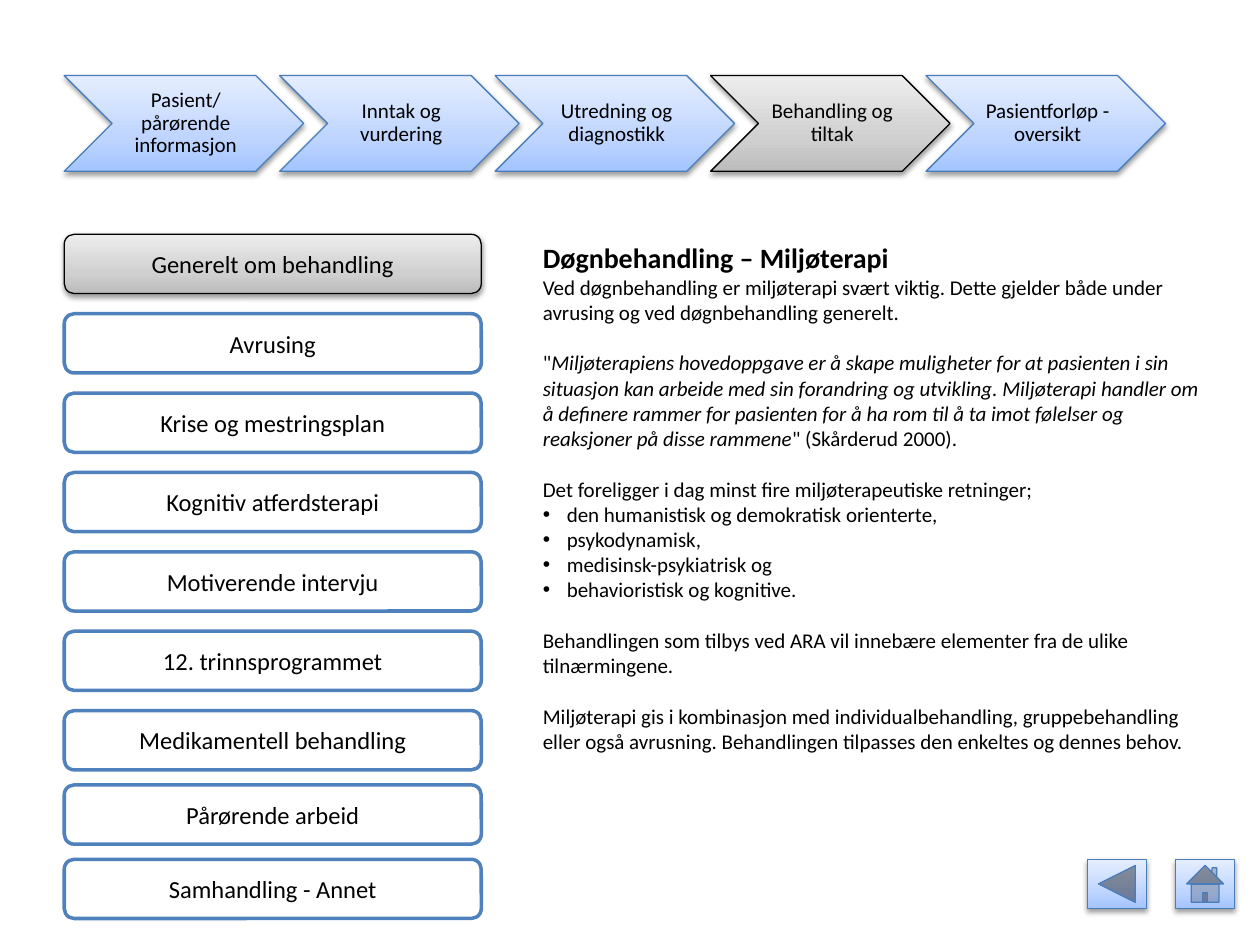
from dataclasses import dataclass

import pptx
import pptx.dml.color
import pptx.enum.shapes
import pptx.enum.text
import pptx.oxml
import pptx.oxml.ns
import pptx.util

Inches = pptx.util.Inches
Pt = pptx.util.Pt
SHAPE = pptx.enum.shapes.MSO_SHAPE
ALIGN = pptx.enum.text.PP_ALIGN
ANCHOR = pptx.enum.text.MSO_ANCHOR
NS = pptx.oxml.ns.nsdecls("a")


def rgb(value):
    return pptx.dml.color.RGBColor.from_string(value)


@dataclass(frozen=True)
class Theme:
    font: str = "Calibri"
    ink: str = "000000"
    paper: str = "FFFFFF"
    outline: str = "4F81BD"
    blue: tuple = ("A3C4FF", "BFD5FF", "E5EEFF")
    blue_line: str = "4A7EBB"
    grey: tuple = ("BCBCBC", "D0D0D0", "EDEDED")
    grey_line: str = "000000"
    heading: int = 16
    button: int = 14
    body: int = 12
    blank_line: float = 14.5


class Page:
    def __init__(self, deck, theme):
        self.theme = theme
        self.page = deck.slides.add_slide(deck.slide_layouts[6])

    def shape(self, kind, left, top, width, height):
        box = self.page.shapes.add_shape(
            kind, Inches(left), Inches(top), Inches(width), Inches(height))
        box.shadow.inherit = False
        return box

    def glossy(self, box, active=False):
        """Give the box a vertical three-stop gradient, thin line and shadow."""
        theme = self.theme
        colours = theme.grey if active else theme.blue
        box.fill.gradient()
        box.fill.gradient_angle = 90
        properties = box._element.spPr
        stops = properties.find(".//" + pptx.oxml.ns.qn("a:gsLst"))
        for stop in list(stops):
            stops.remove(stop)
        for position, colour in zip((0, 35000, 100000), colours):
            stops.append(pptx.oxml.parse_xml(
                f'<a:gs {NS} pos="{position}"><a:srgbClr val="{colour}"/></a:gs>'))
        box.line.color.rgb = rgb(theme.grey_line if active else theme.blue_line)
        box.line.width = Pt(0.75)
        properties.find(pptx.oxml.ns.qn("a:effectLst")).append(pptx.oxml.parse_xml(
            f'<a:outerShdw {NS} blurRad="{Pt(3.1)}" dist="{Pt(1.6)}" dir="5400000" '
            'rotWithShape="0"><a:srgbClr val="000000"><a:alpha val="38000"/>'
            '</a:srgbClr></a:outerShdw>'))

    def span(self, para, text, size, **formats):
        span = para.add_run()
        span.text = text
        formats = {"name": self.theme.font, "size": Pt(size), **formats}
        for name, value in formats.items():
            setattr(span.font, name, value)
        span.font.color.rgb = rgb(self.theme.ink)

    def label(self, box, text, size, **frame_formats):
        frame = box.text_frame
        formats = {"word_wrap": True, "vertical_anchor": ANCHOR.MIDDLE, **frame_formats}
        for name, value in formats.items():
            setattr(frame, name, value)
        para = frame.paragraphs[0]
        para.alignment = ALIGN.CENTER
        self.span(para, text, size)
        return para

    def step(self, text, left, active):
        box = self.shape(SHAPE.CHEVRON, left, 0.6, 1.9, 0.76)
        self.glossy(box, active)
        small = Inches(0.02)
        para = self.label(box, text, self.theme.body, margin_left=Inches(0.05),
                          margin_right=small, margin_top=small, margin_bottom=small)
        para.line_spacing = 0.9

    def menu_button(self, text, top, active):
        box = self.shape(SHAPE.ROUNDED_RECTANGLE, 0.51, top, 3.31, 0.47)
        if active:
            self.glossy(box, active)
        else:
            box.fill.solid()
            box.fill.fore_color.rgb = rgb(self.theme.paper)
            box.line.color.rgb = rgb(self.theme.outline)
            box.line.width = Pt(2)
        self.label(box, text, self.theme.button)

    def navigation_button(self, kind, left):
        self.glossy(self.shape(kind, left, 6.82, 0.47, 0.39))

    def bullet(self, para):
        properties = para._p.get_or_add_pPr()
        properties.set("marL", str(Inches(0.19)))
        properties.set("indent", str(-Inches(0.19)))
        for tag in ('buFont typeface="Arial"', 'buChar char="•"'):
            name, attribute = tag.split(" ")
            properties.append(pptx.oxml.parse_xml(f"<a:{name} {NS} {attribute}/>"))

    def article(self, heading, blocks):
        """Each block is a list of paragraphs; a blank line's gap parts the blocks."""
        theme = self.theme
        box = self.page.shapes.add_textbox(
            Inches(4.21), Inches(1.86), Inches(5.51), Inches(5.64))
        frame = box.text_frame
        frame.word_wrap = True
        self.span(frame.paragraphs[0], heading, theme.heading, bold=True)
        for block_number, block in enumerate(blocks):
            for number, (spans, bulleted) in enumerate(block):
                para = frame.add_paragraph()
                if bulleted:
                    self.bullet(para)
                if block_number and not number:
                    para.space_before = Pt(theme.blank_line)
                for text, italic in spans:
                    self.span(para, text, theme.body, italic=italic)


def plain(text, bulleted=False):
    return [(text, False)], bulleted


STEPS = ["Pasient/ pårørende informasjon", "Inntak og vurdering",
         "Utredning og diagnostikk", "Behandling og tiltak",
         "Pasientforløp - oversikt"]
ACTIVE_STEP = 3
MENU = ["Generelt om behandling", "Avrusing", "Krise og mestringsplan",
        "Kognitiv atferdsterapi", "Motiverende intervju", "12. trinnsprogrammet",
        "Medikamentell behandling", "Pårørende arbeid", "Samhandling - Annet"]
WIDE_GAPS = 6
DIRECTIONS = ["den humanistisk og demokratisk orienterte,", "psykodynamisk,",
              "medisinsk-psykiatrisk og", "behavioristisk og kognitive."]
QUOTE = ("Miljøterapiens hovedoppgave er å skape muligheter for at pasienten i sin "
         "situasjon kan arbeide med sin forandring og utvikling. Miljøterapi handler om "
         "å definere rammer for pasienten for å ha rom til å ta imot følelser og "
         "reaksjoner på disse rammene")
BLOCKS = [
    [plain("Ved døgnbehandling er miljøterapi svært viktig. Dette gjelder både under "
           "avrusing og ved døgnbehandling generelt.")],
    [([('"', False), (QUOTE, True), ('" (Skårderud 2000).', False)], False)],
    [plain("Det foreligger i dag minst fire miljøterapeutiske retninger;")]
    + [plain(direction, bulleted=True) for direction in DIRECTIONS],
    [plain("Behandlingen som tilbys ved ARA vil innebære elementer fra de ulike "
           "tilnærmingene.")],
    [plain("Miljøterapi gis i kombinasjon med individualbehandling, gruppebehandling "
           "eller også avrusning. Behandlingen tilpasses den enkeltes og dennes behov.")],
]


def main():
    deck = pptx.Presentation()
    deck.slide_width, deck.slide_height = Inches(10), Inches(7.5)
    page = Page(deck, Theme())
    page.article("Døgnbehandling – Miljøterapi", BLOCKS)
    for number, text in enumerate(STEPS):
        page.step(text, 0.51 + 1.71 * number, number == ACTIVE_STEP)
    top = 1.86
    for number, text in enumerate(MENU):
        page.menu_button(text, top, number == 0)
        top += 0.63 if number < WIDE_GAPS else 0.59
    page.navigation_button(SHAPE.ACTION_BUTTON_BACK_OR_PREVIOUS, 8.63)
    page.navigation_button(SHAPE.ACTION_BUTTON_HOME, 9.33)
    deck.save("out.pptx")


if __name__ == "__main__":
    main()
